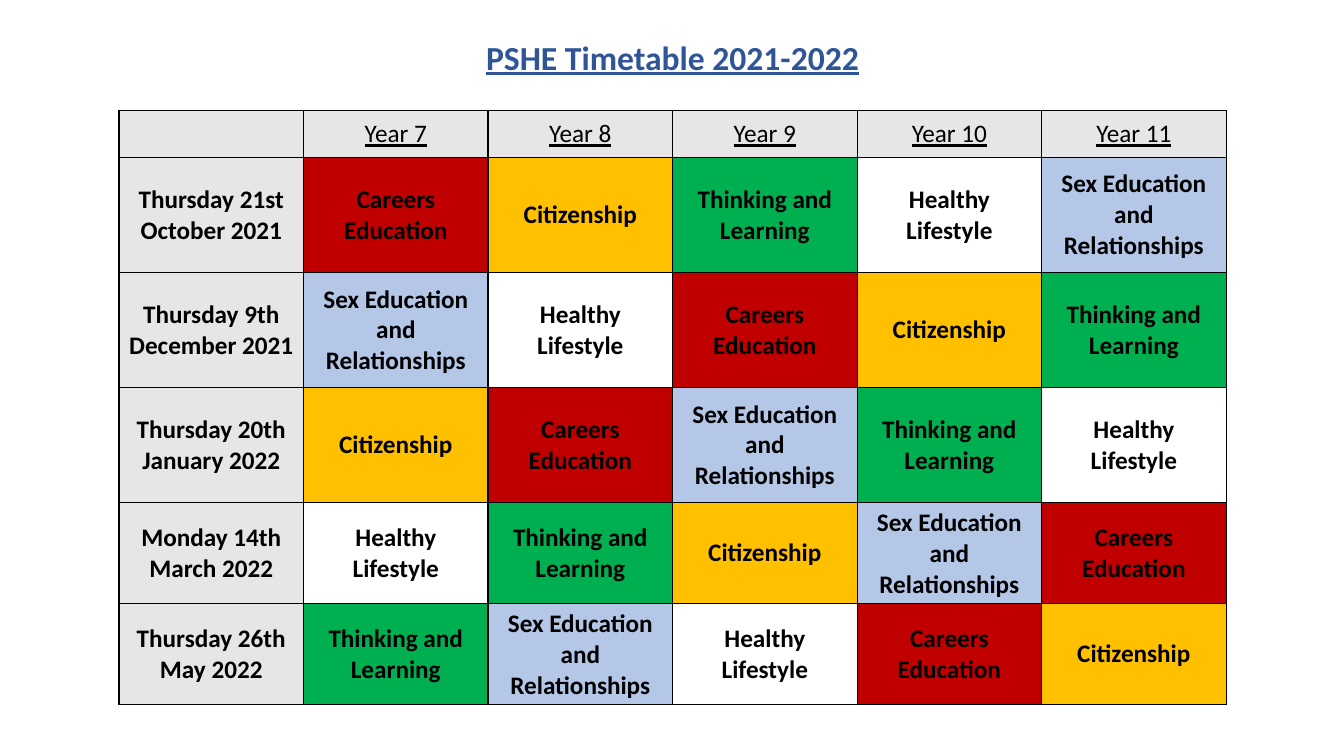
from lxml import etree
from pptx import Presentation
from pptx.dml.color import RGBColor
from pptx.enum import text
from pptx.oxml import ns
from pptx.util import Cm, Pt

TITLE = "PSHE Timetable 2021-2022"
YEARS = ["Year 7", "Year 8", "Year 9", "Year 10", "Year 11"]
CAREERS = "Careers Education"
CITIZEN = "Citizenship"
THINKING = "Thinking and Learning"
HEALTHY = "Healthy Lifestyle"
SEX_ED = "Sex Education and Relationships"
SESSIONS = [
    ("Thursday 21st October 2021", CAREERS, CITIZEN, THINKING, HEALTHY, SEX_ED),
    ("Thursday 9th December 2021", SEX_ED, HEALTHY, CAREERS, CITIZEN, THINKING),
    ("Thursday 20th January 2022", CITIZEN, CAREERS, SEX_ED, THINKING, HEALTHY),
    ("Monday 14th March 2022", HEALTHY, THINKING, CITIZEN, SEX_ED, CAREERS),
    ("Thursday 26th May 2022", THINKING, SEX_ED, HEALTHY, CAREERS, CITIZEN),
]

FONT = "Calibri"
BLUE = RGBColor(0x2F, 0x55, 0x97)
BLACK = RGBColor(0, 0, 0)
GREY = RGBColor(0xE7, 0xE6, 0xE6)
TOPIC_FILLS = {
    CAREERS: RGBColor(0xC0, 0, 0),
    CITIZEN: RGBColor(0xFF, 0xC0, 0),
    THINKING: RGBColor(0, 0xB0, 0x50),
    HEALTHY: RGBColor(0xFF, 0xFF, 0xFF),
    SEX_ED: RGBColor(0xB4, 0xC7, 0xE7),
}

LEFT, COL_W = Cm(3), Cm(4.65)
ROW_HEIGHTS = [Cm(1.18)] + [Cm(2.9)] * 3 + [Cm(2.54)] * 2


def style(p, size, color, bold, underline):
    p.alignment = text.PP_ALIGN.CENTER
    f = p.font
    f.name, f.size, f.bold, f.underline = FONT, Pt(size), bold, underline
    f.color.rgb = color


def add_borders(cell):
    tc_pr = cell._tc.get_or_add_tcPr()
    for i, side in enumerate(("a:lnL", "a:lnR", "a:lnT", "a:lnB")):
        ln = etree.Element(ns.qn(side), w=str(Pt(1)))
        fill = etree.SubElement(ln, ns.qn("a:solidFill"))
        etree.SubElement(fill, ns.qn("a:srgbClr"), val=str(BLACK))
        tc_pr.insert(i, ln)


prs = Presentation()
prs.slide_width, prs.slide_height = Cm(33.87), Cm(19.05)
s = prs.slides.add_slide(prs.slide_layouts[6])

rows = [("", *YEARS)] + SESSIONS
width = COL_W * len(rows[0])

tf = s.shapes.add_textbox(LEFT, Cm(0.8), width, Cm(1.28)).text_frame
tf.word_wrap = True
tf.text = TITLE
style(tf.paragraphs[0], 24, BLUE, True, True)

table = s.shapes.add_table(len(rows), len(rows[0]), LEFT, Cm(2.79),
                           width, sum(ROW_HEIGHTS)).table
for col in table.columns:
    col.width = COL_W
for r, (row, height) in enumerate(zip(rows, ROW_HEIGHTS)):
    table.rows[r].height = height
    for c, label in enumerate(row):
        cell = table.cell(r, c)
        cell.text = label
        cell.vertical_anchor = text.MSO_ANCHOR.MIDDLE
        cell.margin_left = cell.margin_right = Cm(0.2)
        cell.fill.solid()
        cell.fill.fore_color.rgb = TOPIC_FILLS.get(label, GREY)
        style(cell.text_frame.paragraphs[0], 18, BLACK, r > 0, r == 0)
        add_borders(cell)

prs.save("out.pptx")
